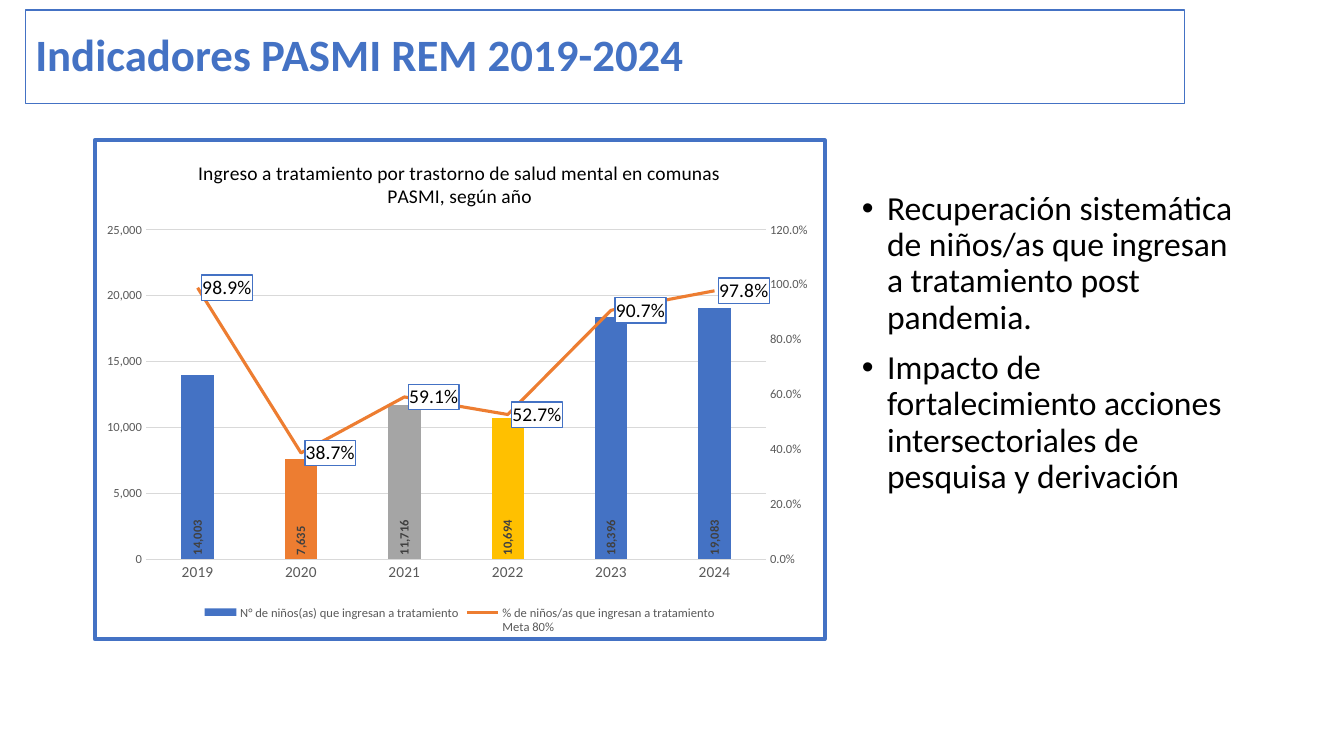
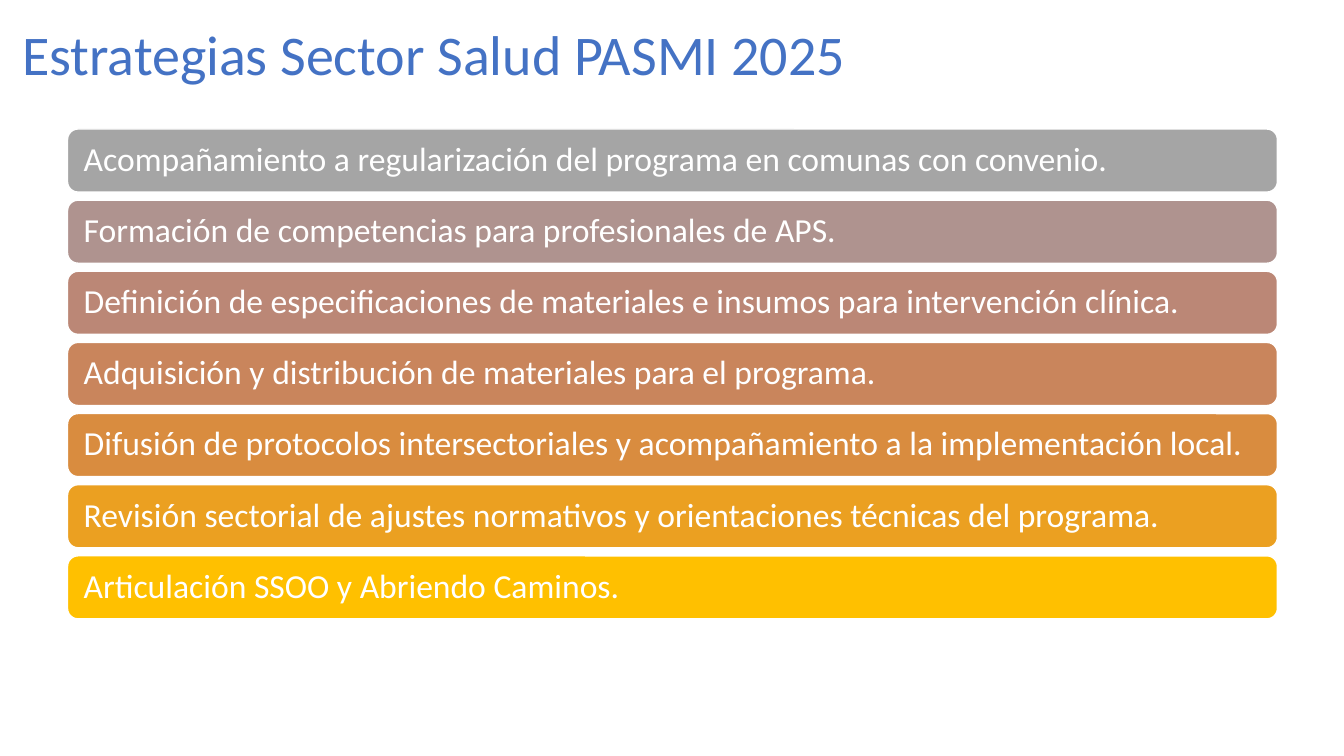
from colorsys import hls_to_rgb
from copy import deepcopy

from lxml.etree import SubElement
from pptx import Presentation
from pptx.chart.axis import ValueAxis
from pptx.chart.data import CategoryChartData
from pptx.dml.color import RGBColor
from pptx.enum.chart import XL_CHART_TYPE as ChartType
from pptx.enum.chart import XL_LABEL_POSITION as LabelPosition
from pptx.enum.chart import XL_LEGEND_POSITION as LegendPosition
from pptx.enum.chart import XL_MARKER_STYLE as MarkerStyle
from pptx.enum.chart import XL_TICK_MARK as TickMark
from pptx.enum.shapes import MSO_SHAPE as Shape
from pptx.enum.text import MSO_ANCHOR as Anchor
from pptx.enum.text import MSO_AUTO_SIZE as AutoSize
from pptx.enum.text import PP_ALIGN as Align
from pptx.oxml import parse_xml
from pptx.oxml.ns import nsdecls, qn
from pptx.util import Inches, Pt

FONT = "Calibri"
BLUE, ORANGE, GRAY, GOLD = "4472C4", "ED7D31", "A5A5A5", "FFC000"
WHITE, BLACK, AXIS_TEXT, GRID = "FFFFFF", "000000", "595959", "D9D9D9"
RIGHT_AXIS_IDS = {"c:catAx": "5001", "c:valAx": "5002"}

YEARS = ["2019", "2020", "2021", "2022", "2023", "2024"]
ENTRIES = [14003, 7635, 11716, 10694, 18396, 19083]
RATES = [0.989, 0.387, 0.591, 0.527, 0.907, 0.978]
FINDINGS = [
    "Recuperación sistemática de niños/as que ingresan a tratamiento post pandemia.",
    "Impacto de fortalecimiento acciones intersectoriales de pesquisa y derivación",
]
STRATEGIES = [
    "Acompañamiento a regularización del programa en comunas con convenio.",
    "Formación de competencias para profesionales de APS.",
    "Definición de especificaciones de materiales e insumos para intervención clínica.",
    "Adquisición y distribución de materiales para el programa.",
    "Difusión de protocolos intersectoriales y acompañamiento a la implementación local.",
    "Revisión sectorial de ajustes normativos y orientaciones técnicas del programa.",
    "Articulación SSOO y Abriendo Caminos.",
]


def color(value):
    return RGBColor.from_string(value)


def paint(target, fill=None, line=None, width=1):
    if fill:
        target.fill.solid()
        target.fill.fore_color.rgb = color(fill)
    if line:
        target.line.color.rgb = color(line)
        target.line.width = Pt(width)


def style_font(font, size, tint, bold=False):
    font.name = FONT
    font.size = Pt(size)
    font.bold = bold
    font.color.rgb = color(tint)


def write(frame, *lines, size=24, tint=BLACK, bold=False, bullet=False,
          anchor=Anchor.TOP, gap=0):
    frame.word_wrap = True
    frame.auto_size = AutoSize.NONE
    frame.vertical_anchor = anchor
    for index, text in enumerate(lines):
        para = frame.add_paragraph() if index else frame.paragraphs[0]
        para.alignment = Align.LEFT
        para.line_spacing = 0.9
        para.space_before = Pt(gap if index else 0)
        if bullet:
            props = para._p.get_or_add_pPr()
            props.set("marL", str(Inches(0.25)))
            props.set("indent", str(-Inches(0.25)))
            SubElement(props, qn("a:buFont")).set("typeface", "Arial")
            SubElement(props, qn("a:buChar")).set("char", "•")
        span = para.add_run()
        span.text = text
        style_font(span.font, size, tint, bold)


def place(shape, left, top, width, height):
    shape.left, shape.top = Inches(left), Inches(top)
    shape.width, shape.height = Inches(width), Inches(height)


def add_page(deck, title, box, size, bold=False):
    page = deck.slides.add_slide(deck.slide_layouts[5])
    place(page.shapes.title, *box)
    write(page.shapes.title.text_frame, title, size=size, tint=BLUE, bold=bold,
          anchor=Anchor.MIDDLE)
    return page


def box_properties(border, width):
    return parse_xml(
        f'<c:spPr {nsdecls("c", "a")}>'
        f'<a:solidFill><a:srgbClr val="{WHITE}"/></a:solidFill>'
        f'<a:ln w="{Pt(width)}"><a:solidFill><a:srgbClr val="{border}"/></a:solidFill>'
        '<a:round/></a:ln></c:spPr>')


def style_axes(chart):
    years, counts = chart.category_axis, chart.value_axis
    for axis, size in ((years, 11), (counts, 9)):
        axis.major_tick_mark = axis.minor_tick_mark = TickMark.NONE
        style_font(axis.tick_labels.font, size, AXIS_TEXT)
    paint(years.format, line=GRID, width=0.75)
    counts.format.line.fill.background()
    counts.has_major_gridlines = True
    paint(counts.major_gridlines.format, line=GRID, width=0.75)
    counts.minimum_scale, counts.maximum_scale, counts.major_unit = 0, 25000, 5000
    counts.tick_labels.number_format = "#,##0"
    counts.tick_labels.number_format_is_linked = False


def move_rates_to_right_axis(chart):
    plot_area = chart._chartSpace.chart.plotArea
    bars = plot_area.find(qn("c:barChart"))
    lines = parse_xml(
        f'<c:lineChart {nsdecls("c")}><c:grouping val="standard"/>'
        '<c:varyColors val="0"/><c:marker val="1"/>'
        + "".join(f'<c:axId val="{key}"/>' for key in RIGHT_AXIS_IDS.values())
        + "</c:lineChart>")
    rates = bars.findall(qn("c:ser"))[1]
    for flag in rates.findall(qn("c:invertIfNegative")):
        rates.remove(flag)
    lines.find(qn("c:marker")).addprevious(rates)
    bars.addnext(lines)

    last = plot_area.find(qn("c:valAx"))
    cat_id, val_id = RIGHT_AXIS_IDS.values()
    for tag, own, other in (("c:valAx", val_id, cat_id), ("c:catAx", cat_id, val_id)):
        axis = deepcopy(plot_area.find(qn(tag)))
        axis.find(qn("c:axId")).set("val", own)
        axis.find(qn("c:crossAx")).set("val", other)
        last.addnext(axis)
        last = axis
        if tag == "c:valAx":
            axis.find(qn("c:axPos")).set("val", "r")
            axis.find(qn("c:crosses")).set("val", "max")
            percent = ValueAxis(axis)
            percent.has_major_gridlines = False
            percent.maximum_scale, percent.major_unit = 1.2, 0.2
            percent.tick_labels.number_format = "0.0%"
        else:
            axis.find(qn("c:delete")).set("val", "1")


def set_plot_layout(chart, **fractions):
    plot_area = chart._chartSpace.chart.plotArea
    for layout in plot_area.findall(qn("c:layout")):
        plot_area.remove(layout)
    layout = parse_xml(
        f'<c:layout {nsdecls("c")}><c:manualLayout><c:layoutTarget val="inner"/>'
        '<c:xMode val="edge"/><c:yMode val="edge"/>'
        + "".join(f'<c:{key} val="{value}"/>' for key, value in fractions.items())
        + "</c:manualLayout></c:layout>")
    plot_area.insert(0, layout)


def label_series(series, pattern, position, size, tint, bold=False):
    labels = series.data_labels
    labels.show_value = True
    labels.number_format = pattern
    labels.number_format_is_linked = False
    labels.position = position
    style_font(labels.font, size, tint, bold)
    return labels._element.find(qn("c:txPr"))


def style_series(chart):
    bars, lines = chart.plots
    bars.gap_width, bars.overlap = 219, -27
    bars.vary_by_categories = False
    entries, rates = bars.series[0], lines.series[0]
    paint(entries.format, fill=BLUE)
    for index, tint in enumerate((ORANGE, GRAY, GOLD), start=1):
        paint(entries.points[index].format, fill=tint)
    text = label_series(entries, "#,##0", LabelPosition.INSIDE_BASE, 9, "404040", True)
    text.find(qn("a:bodyPr")).set("rot", "-5400000")
    text.find(qn("a:bodyPr")).set("vert", "horz")

    paint(rates.format, line=ORANGE, width=2.25)
    rates.smooth = False
    rates.marker.style = MarkerStyle.NONE
    text = label_series(rates, "0.0%", LabelPosition.RIGHT, 14, BLACK)
    text.addprevious(box_properties(BLUE, 1))


def add_treatment_chart(page, left, top, width, height):
    data = CategoryChartData()
    data.categories = YEARS
    data.add_series("N° de niños(as) que ingresan a tratamiento", ENTRIES)
    data.add_series("% de niños/as que ingresan a tratamiento\nMeta 80%", RATES)
    chart = page.shapes.add_chart(
        ChartType.COLUMN_CLUSTERED, Inches(left), Inches(top),
        Inches(width), Inches(height), data).chart
    style_font(chart.font, 10, BLACK)
    chart._chartSpace.find(qn("c:txPr")).addprevious(box_properties(BLUE, 3))
    chart.has_title = True
    para = chart.chart_title.text_frame.paragraphs[0]
    span = para.add_run()
    span.text = "Ingreso a tratamiento por trastorno de salud mental en comunas PASMI, según año"
    style_font(span.font, 14, BLACK)
    chart.has_legend = True
    chart.legend.position = LegendPosition.BOTTOM
    chart.legend.include_in_layout = False
    style_font(chart.legend.font, 9, AXIS_TEXT)
    style_axes(chart)
    move_rates_to_right_axis(chart)
    style_series(chart)
    set_plot_layout(chart, x=0.07, y=0.18, w=0.85, h=0.66)


def add_findings(page, left, top, width, height):
    box = page.shapes.add_textbox(
        Inches(left), Inches(top), Inches(width), Inches(height))
    write(box.text_frame, *FINDINGS, bullet=True, gap=10)


def band_color(share):
    light = 0.647 + (0.5 - 0.647) * share
    channels = hls_to_rgb(share * 45.2 / 360, light, share)
    return "".join(f"{round(channel * 255):02X}" for channel in channels)


def add_strategies(page, left, top, width, height):
    count, gap = len(STRATEGIES), 0.08
    band_height = (height - gap * (count - 1)) / count
    for index, text in enumerate(STRATEGIES):
        band = page.shapes.add_shape(
            Shape.ROUNDED_RECTANGLE, Inches(left),
            Inches(top + index * (band_height + gap)),
            Inches(width), Inches(band_height))
        band.shadow.inherit = False
        paint(band, fill=band_color(index / (count - 1)), line=WHITE)
        band.text_frame.margin_left = Inches(0.13)
        write(band.text_frame, text, tint=WHITE, anchor=Anchor.MIDDLE)


def build_indicators(deck):
    page = add_page(deck, "Indicadores PASMI REM 2019-2024",
                    (0.25, 0.1, 11.5, 0.93), size=32, bold=True)
    paint(page.shapes.title, fill=WHITE, line=BLUE)
    add_treatment_chart(page, 0.92, 1.37, 7.28, 4.99)
    add_findings(page, 8.45, 1.85, 3.97, 3.34)


def build_strategies(deck):
    page = add_page(deck, "Estrategias Sector Salud PASMI 2025",
                    (0.12, 0.15, 11.5, 0.83), size=40)
    add_strategies(page, 0.67, 1.28, 12, 4.86)


def main():
    deck = Presentation()
    deck.slide_width, deck.slide_height = Inches(13.33), Inches(7.5)
    build_indicators(deck)
    build_strategies(deck)
    deck.save("out.pptx")


if __name__ == "__main__":
    main()
